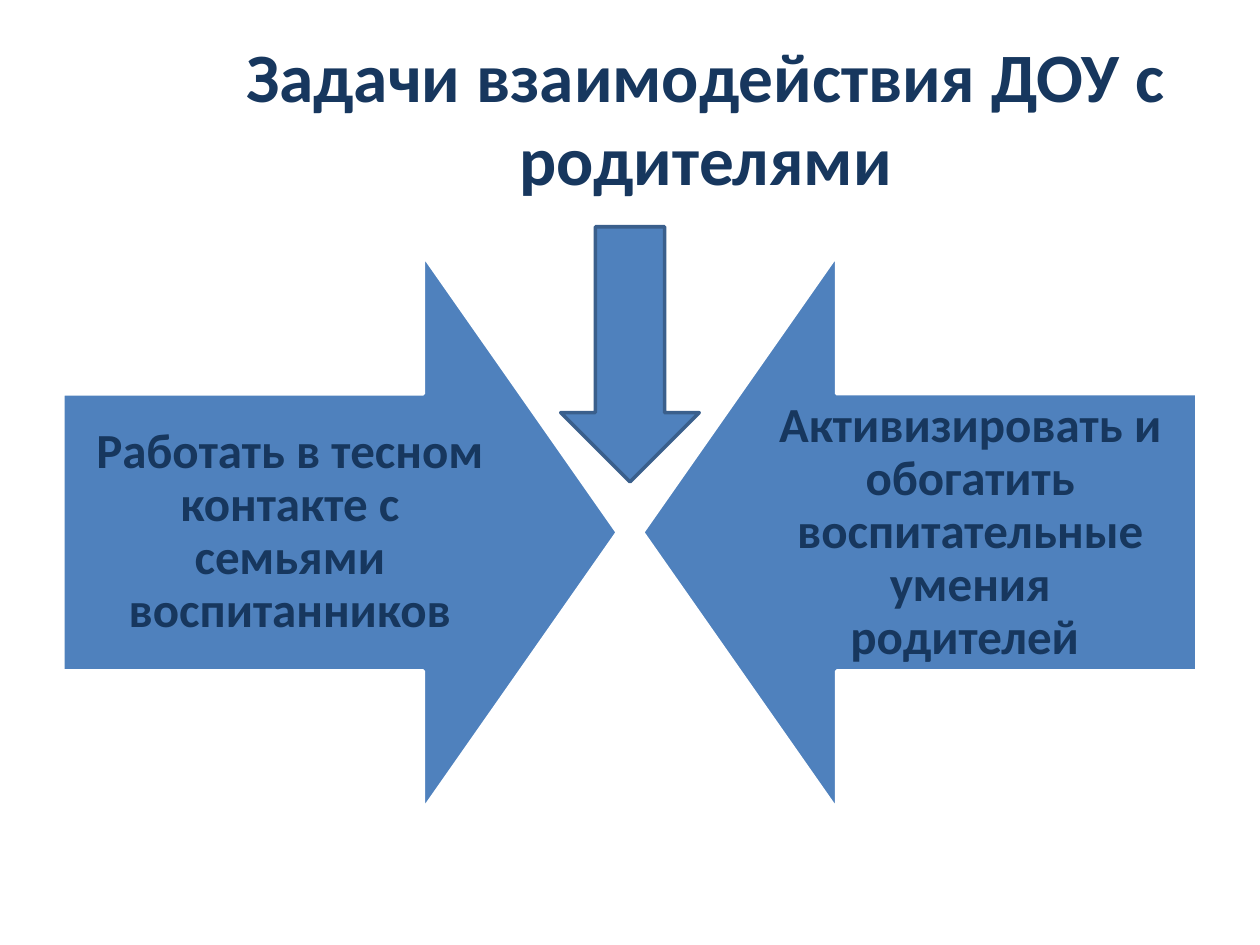
from pptx import Presentation
from pptx.dml.color import RGBColor
from pptx.enum.shapes import MSO_SHAPE as Shape
from pptx.enum.text import MSO_ANCHOR as Anchor, MSO_AUTO_SIZE as AutoSize, PP_ALIGN as Align
from pptx.util import Inches, Pt

WIDTH, HEIGHT = 10, 7.5
NAVY = RGBColor(0x17, 0x37, 0x5E)
BLUE = RGBColor(0x4F, 0x81, 0xBD)
DARK_BLUE = RGBColor(0x3A, 0x5F, 0x8C)
WHITE = RGBColor(0xFF, 0xFF, 0xFF)


class SlideBuilder:
    """Holds the style and the slide; lengths are shares of the slide's size."""

    font_name = "Calibri"
    text_color = NAVY
    fill_color = BLUE
    line_width = Pt(2)

    def __init__(self, presentation):
        self.slide = presentation.slides.add_slide(presentation.slide_layouts[5])
        self.width = presentation.slide_width
        self.height = presentation.slide_height

    def box(self, left, top, width, height):
        return (round(left * self.width), round(top * self.height),
                round(width * self.width), round(height * self.height))

    def set_text(self, shape, text, size, spacing=None, inset=None):
        frame = shape.text_frame
        frame.text = text
        frame.word_wrap = True
        frame.auto_size = AutoSize.NONE
        frame.vertical_anchor = Anchor.MIDDLE
        if inset is not None:
            frame.margin_left = frame.margin_right = inset
            frame.margin_top = frame.margin_bottom = inset
        paragraph = frame.paragraphs[0]
        paragraph.alignment = Align.CENTER
        paragraph.line_spacing = spacing
        font = paragraph.font
        font.name, font.size, font.bold = self.font_name, Pt(size), True
        font.color.rgb = self.text_color

    def title(self, text, *place):
        shape = self.slide.shapes.title
        shape.left, shape.top, shape.width, shape.height = self.box(*place)
        self.set_text(shape, text, 39.6)

    def label(self, text, *place):
        shape = self.slide.shapes.add_textbox(*self.box(*place))
        self.set_text(shape, text, 28, spacing=0.9, inset=Inches(0.22))

    def arrow(self, *place, line_color, rotation=0, head=0.5):
        shape = self.slide.shapes.add_shape(Shape.DOWN_ARROW, *self.box(*place))
        shape.shadow.inherit = False
        shape.rotation = rotation
        shape.adjustments[0], shape.adjustments[1] = 0.5, head
        shape.fill.solid()
        shape.fill.fore_color.rgb = self.fill_color
        shape.line.color.rgb = line_color
        shape.line.width = self.line_width


def main():
    presentation = Presentation()
    presentation.slide_width, presentation.slide_height = Inches(WIDTH), Inches(HEIGHT)
    builder = SlideBuilder(presentation)

    # Title
    builder.title("Задачи взаимодействия ДОУ с родителями",
                  0.17, 0.04, 0.78, 1 / 6)

    # Two square arrows pointing at each other, labels flush with the outer edges
    margin, side, label_width = 0.05, 0.44, 0.36
    side_height = side * WIDTH / HEIGHT
    arrow_top = 0.27
    label_height = side_height / 2
    label_top = arrow_top + label_height / 2
    tasks = [
        ("Работать в тесном контакте с семьями воспитанников",
         270, margin, margin),
        ("Активизировать и обогатить воспитательные умения родителей ",
         90, 1 - margin - side, 1 - margin - label_width),
    ]
    for text, rotation, arrow_left, label_left in tasks:
        builder.arrow(arrow_left, arrow_top, side, side_height,
                      line_color=WHITE, rotation=rotation, head=0.35)
        builder.label(text, label_left, label_top, label_width, label_height)

    # Centred arrow from the title down to the tasks
    width = 0.11
    builder.arrow((1 - width) / 2, 0.24, width, 0.27, line_color=DARK_BLUE)

    presentation.save("out.pptx")


if __name__ == "__main__":
    main()
